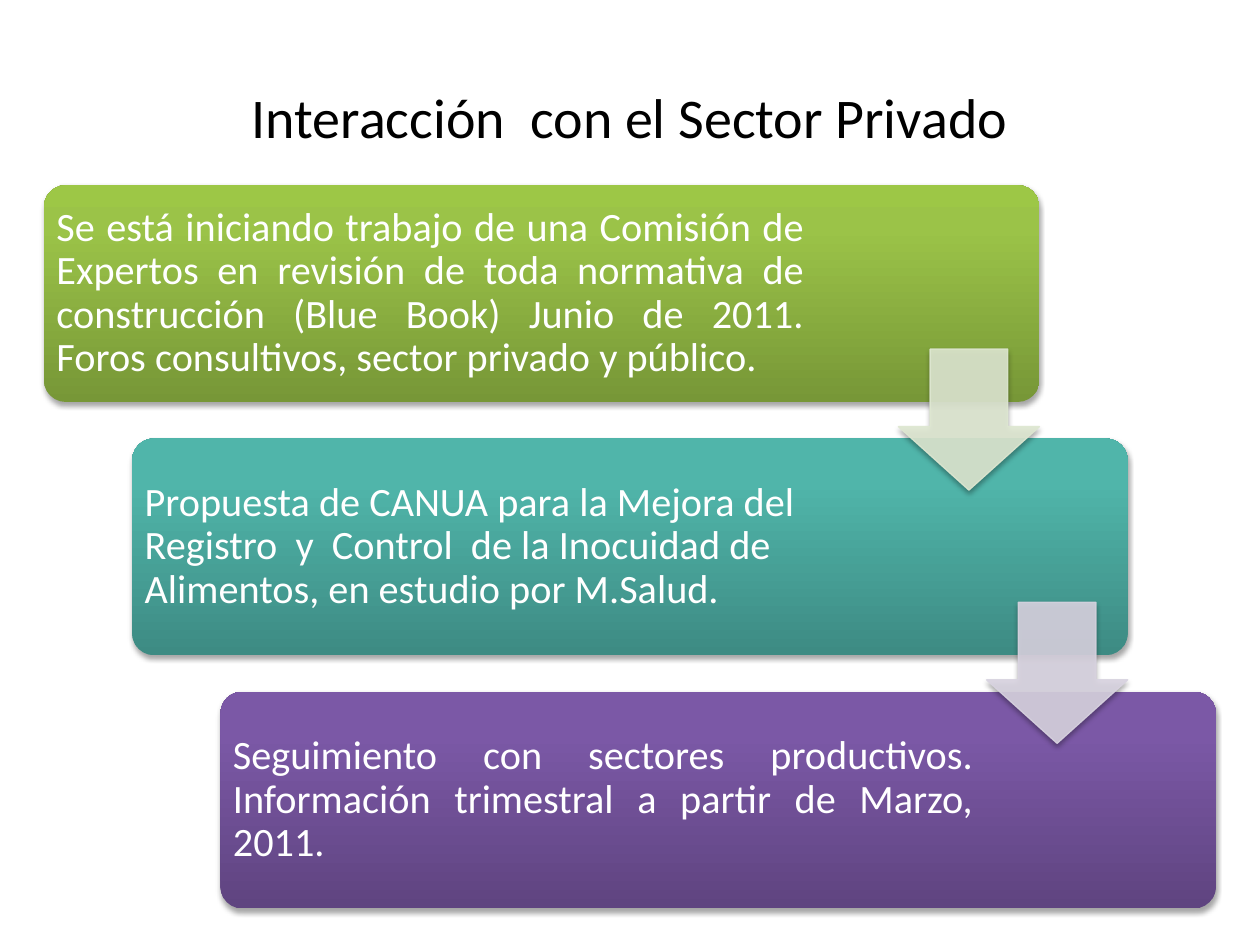
import copy
import pptx
import pptx.dml.color
import pptx.enum.shapes
import pptx.enum.text
import pptx.oxml
import pptx.oxml.ns
import pptx.util

Inches = pptx.util.Inches
Pt = pptx.util.Pt
qn = pptx.oxml.ns.qn
Kind = pptx.enum.shapes.MSO_SHAPE
Align = pptx.enum.text.PP_ALIGN

COLORS = {
    "black": "000000",
    "white": "FFFFFF",
    "green": ("779737", "9BC348", "9DC746"),
    "teal": ("3D8B83", "50B5AA", "4EB8AC"),
    "purple": ("5F4480", "7B58A6", "7C57A8"),
    "sage": "DEE7D1",
    "lilac": "D8D3E0",
}
TITLE = "Interacción  con el Sector Privado"
STEPS = [
    ("Se está iniciando trabajo de una Comisión de Expertos en revisión de toda "
     "normativa de construcción (Blue Book) Junio de 2011. Foros consultivos, "
     "sector privado y público.", "green", Align.JUSTIFY, 6.14),
    ("Propuesta de CANUA para la Mejora del Registro  y  Control  de la Inocuidad de "
     "Alimentos, en estudio por M.Salud.", "teal", Align.LEFT, 6.08),
    ("Seguimiento con sectores productivos. Información trimestral a partir de "
     "Marzo, 2011.", "purple", Align.JUSTIFY, 6.08),
]
ARROWS = ["sage", "lilac"]
LEFT, TOP, WIDE, HIGH = 0.35, 1.47, 7.9, 1.72
STEP_X, STEP_Y = 0.7, 2.01
SIDE, DROP = 1.12, 1.3
STOPS = (0, 0.8, 1)


def rgb(code):
    return pptx.dml.color.RGBColor.from_string(code)


def write(shape, text, size=23, color="white", align=Align.LEFT, space=None, after=0, inset=0.1):
    frame = shape.text_frame
    frame.word_wrap = True
    frame.vertical_anchor = pptx.enum.text.MSO_ANCHOR.MIDDLE
    frame.margin_left = frame.margin_right = Inches(inset)
    frame.margin_top = frame.margin_bottom = Inches(inset)
    para = frame.paragraphs[0]
    para.alignment = align
    para.line_spacing = space
    para.space_after = Pt(after)
    run = para.add_run()
    run.text = text
    run.font.size = Pt(size)
    run.font.name = "Calibri"
    run.font.color.rgb = rgb(COLORS[color])


def shade(shape):
    shape.shadow.inherit = False
    effects = shape._element.spPr.find(qn("a:effectLst"))
    effects.append(pptx.oxml.parse_xml(
        f'<a:outerShdw {pptx.oxml.ns.nsdecls("a")} blurRad="{Pt(3.1)}" dist="{Pt(1.8)}" '
        'dir="5400000" rotWithShape="0"><a:srgbClr val="000000">'
        '<a:alpha val="35000"/></a:srgbClr></a:outerShdw>'))


def blend(shape, codes):
    fill = shape.fill
    fill.gradient()
    fill.gradient_angle = 90
    stops = shape._element.spPr.find(".//" + qn("a:gsLst"))
    stops.append(copy.deepcopy(stops[-1]))
    for stop, place, code in zip(fill.gradient_stops, STOPS, codes):
        stop.position = place
        stop.color.rgb = rgb(code)


def fade(shape, code):
    shape.fill.solid()
    shape.fill.fore_color.rgb = rgb(code)
    shape.line.color.rgb = rgb(code)
    shape.line.width = Pt(0.75)
    for node in shape._element.spPr.findall(".//" + qn("a:solidFill")):
        alpha = node[0].makeelement(qn("a:alpha"), {"val": "90000"})
        node[0].append(alpha)


def main():
    deck = pptx.Presentation()
    deck.slide_width, deck.slide_height = Inches(10), Inches(7.5)
    slide = deck.slides.add_slide(deck.slide_layouts[5])
    shapes = slide.shapes

    title = shapes.title
    title.left, title.top = Inches(0.5), Inches(0.3)
    title.width, title.height = Inches(9), Inches(1.25)
    write(title, TITLE, size=32, color="black", align=Align.CENTER)

    for row, (text, color, align, width) in enumerate(STEPS):
        x, y = Inches(LEFT + row * STEP_X), Inches(TOP + row * STEP_Y)
        box = shapes.add_shape(Kind.ROUNDED_RECTANGLE, x, y, Inches(WIDE), Inches(HIGH))
        box.adjustments[0] = 0.1
        box.line.fill.background()
        blend(box, COLORS[color])
        shade(box)
        label = shapes.add_textbox(x, y, Inches(width), Inches(HIGH))
        write(label, text, align=align, space=0.9, after=8)

    for row, color in enumerate(ARROWS):
        x = LEFT + row * STEP_X + WIDE - SIDE
        y = TOP + row * STEP_Y + DROP
        arrow = shapes.add_shape(Kind.DOWN_ARROW, Inches(x), Inches(y), Inches(SIDE), Inches(SIDE))
        arrow.adjustments[0] = 0.55
        arrow.adjustments[1] = 0.45
        fade(arrow, COLORS[color])
        shade(arrow)

    deck.save("out.pptx")


if __name__ == "__main__":
    main()
